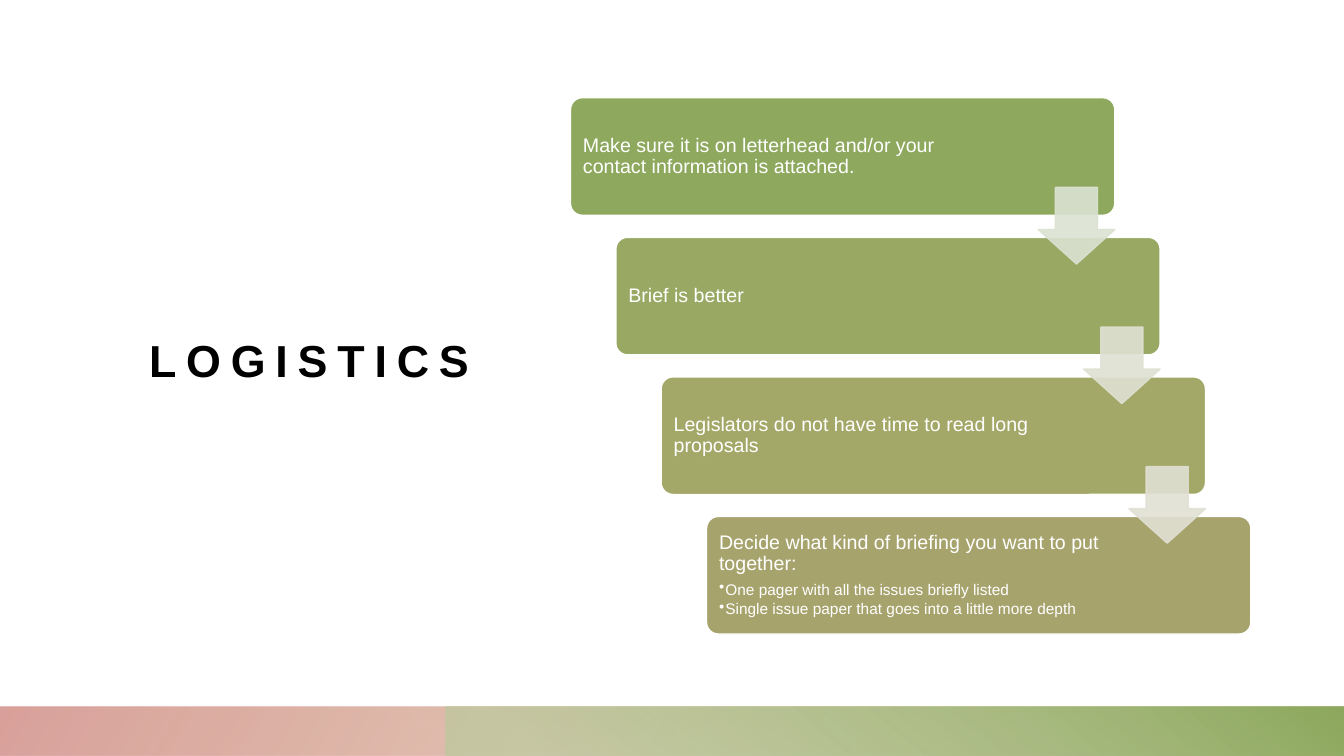
"""Build the Logistics slide: a title, four descending steps and a gradient footer."""
from dataclasses import dataclass
from typing import Optional

from lxml.etree import SubElement
from pptx import Presentation
from pptx.dml.color import RGBColor
from pptx.enum.shapes import MSO_SHAPE
from pptx.enum.text import MSO_ANCHOR, MSO_AUTO_SIZE, PP_ALIGN
from pptx.oxml.ns import qn
from pptx.util import Pt

WHITE = RGBColor(0xFF, 0xFF, 0xFF)
BLACK = RGBColor(0x00, 0x00, 0x00)
TAN = RGBColor(0xC5, 0x97, 0x66)
PINK = RGBColor(0xD3, 0x91, 0x8A)
PALE_GREEN = RGBColor(0xBB, 0xCB, 0x9E)
GREEN = RGBColor(0x8E, 0xA9, 0x5E)
OLIVE = RGBColor(0x99, 0xA8, 0x63)
MOSS = RGBColor(0xA3, 0xA8, 0x68)
KHAKI = RGBColor(0xA7, 0xA3, 0x6D)
MIST_GREEN = RGBColor(0xDB, 0xE2, 0xD2)
MIST_OLIVE = RGBColor(0xDF, 0xE1, 0xD3)
MIST_MOSS = RGBColor(0xE1, 0xE0, 0xD4)

FONT = "Arial"
PAGE_WIDTH, PAGE_HEIGHT = 960, 540
BAR_TOP = 504.5
STEP_LEFT, STEP_TOP = 407.5, 69.8
STEP_WIDTH, STEP_HEIGHT = 388.8, 84
STEP_RIGHT_SHIFT, STEP_DOWN_SHIFT = 32.4, 99.7
ARROW_LEFT, ARROW_TOP, ARROW_SIZE = 741.6, 133.9, 54.7
BULLET_INDENT = 4.5


@dataclass
class Stop:
    position: float
    color: RGBColor
    opacity: int


@dataclass
class Bar:
    left: float
    angle: float
    stops: tuple[Stop, Stop]


@dataclass
class Step:
    fill: RGBColor
    heading: str
    arrow: Optional[RGBColor] = None
    points: tuple[str, ...] = ()


BARS = (
    Bar(0, 150, (Stop(0.14, TAN, 28), Stop(1, PINK, 85))),
    Bar(318, 50, (Stop(0.09, PALE_GREEN, 68), Stop(0.99, GREEN, 100))),
)

STEPS = (
    Step(GREEN, "Make sure it is on letterhead and/or your contact information is attached.", MIST_GREEN),
    Step(OLIVE, "Brief is better", MIST_OLIVE),
    Step(MOSS, "Legislators do not have time to read long proposals", MIST_MOSS),
    Step(KHAKI, "Decide what kind of briefing you want to put together:", points=(
        "One pager with all the issues briefly listed",
        "Single issue paper that goes into a little more depth",
    )),
)


def add_box(page, kind: MSO_SHAPE, left: float, top: float, width: float, height: float):
    box = page.shapes.add_shape(kind, Pt(left), Pt(top), Pt(width), Pt(height))
    box.shadow.inherit = False
    return box


def paint(box, fill: RGBColor, line: RGBColor) -> None:
    box.fill.solid()
    box.fill.fore_color.rgb = fill
    box.line.color.rgb = line
    box.line.width = Pt(1)


def set_opacities(box, *opacities: int) -> None:
    for color, opacity in zip(box.element.spPr.iter(qn("a:srgbClr")), opacities):
        SubElement(color, qn("a:alpha"), val=str(opacity * 1000))


def set_margins(frame, left: float, top: float, right: float, bottom: float) -> None:
    frame.margin_left, frame.margin_top = Pt(left), Pt(top)
    frame.margin_right, frame.margin_bottom = Pt(right), Pt(bottom)


def write(para, text: str, *, size: float, color: RGBColor, bold: bool = False,
          tracking: float = 0, line_spacing: float = 1, after: float = 0,
          bullet: bool = False) -> None:
    para.alignment = PP_ALIGN.LEFT
    para.line_spacing = line_spacing
    para.space_after = Pt(after)
    if bullet:
        para.level = 1
        properties = para._p.get_or_add_pPr()
        properties.set("marL", str(Pt(BULLET_INDENT)))
        properties.set("indent", str(-Pt(BULLET_INDENT)))
        SubElement(properties, qn("a:buChar"), char="•")
    span = para.add_run()
    span.text = text
    span.font.name = FONT
    span.font.size = Pt(size)
    span.font.bold = bold
    span.font.color.rgb = color
    if tracking:
        span.font._element.set("spc", str(round(tracking * 100)))


def add_title(page, text: str) -> None:
    title = page.shapes.title
    title.left, title.top, title.width, title.height = Pt(106.5), Pt(80.6), Pt(262), Pt(352)
    frame = title.text_frame
    frame.auto_size = MSO_AUTO_SIZE.NONE
    frame.word_wrap = True
    frame.vertical_anchor = MSO_ANCHOR.MIDDLE
    set_margins(frame, 0, 0, 0, 0)
    write(frame.paragraphs[0], text, size=32, color=BLACK, bold=True, tracking=7)


def add_bar(page, bar: Bar) -> None:
    box = add_box(page, MSO_SHAPE.RECTANGLE, bar.left, BAR_TOP,
                  PAGE_WIDTH - bar.left, PAGE_HEIGHT - BAR_TOP)
    box.line.fill.background()
    box.fill.gradient()
    box.fill.gradient_angle = bar.angle
    for target, stop in zip(box.fill.gradient_stops, bar.stops):
        target.position = stop.position
        target.color.rgb = stop.color
    set_opacities(box, *(stop.opacity for stop in bar.stops))


def add_step(page, step: Step, index: int) -> None:
    box = add_box(page, MSO_SHAPE.ROUNDED_RECTANGLE,
                  STEP_LEFT + index * STEP_RIGHT_SHIFT, STEP_TOP + index * STEP_DOWN_SHIFT,
                  STEP_WIDTH, STEP_HEIGHT)
    box.adjustments[0] = 0.1
    paint(box, step.fill, WHITE)
    frame = box.text_frame
    frame.word_wrap = True
    frame.vertical_anchor = MSO_ANCHOR.MIDDLE
    set_margins(frame, 6.5, 6.5, 94.5, 6.5)
    write(frame.paragraphs[0], step.heading, size=14, color=WHITE, line_spacing=0.9, after=5)
    for point in step.points:
        write(frame.add_paragraph(), point, size=11, color=WHITE,
              line_spacing=0.9, after=2, bullet=True)


def add_arrow(page, color: RGBColor, index: int) -> None:
    arrow = add_box(page, MSO_SHAPE.DOWN_ARROW,
                    ARROW_LEFT + index * STEP_RIGHT_SHIFT, ARROW_TOP + index * STEP_DOWN_SHIFT,
                    ARROW_SIZE, ARROW_SIZE)
    arrow.adjustments[0], arrow.adjustments[1] = 0.55, 0.45
    paint(arrow, color, color)
    set_opacities(arrow, 90, 90)


def main() -> None:
    deck = Presentation()
    deck.slide_width, deck.slide_height = Pt(PAGE_WIDTH), Pt(PAGE_HEIGHT)
    page = deck.slides.add_slide(deck.slide_layouts[5])
    add_title(page, "LOGISTICS")
    for bar in BARS:
        add_bar(page, bar)
    for index, step in enumerate(STEPS):
        add_step(page, step, index)
    for index, step in enumerate(STEPS):
        if step.arrow is not None:
            add_arrow(page, step.arrow, index)
    deck.save("out.pptx")


if __name__ == "__main__":
    main()
